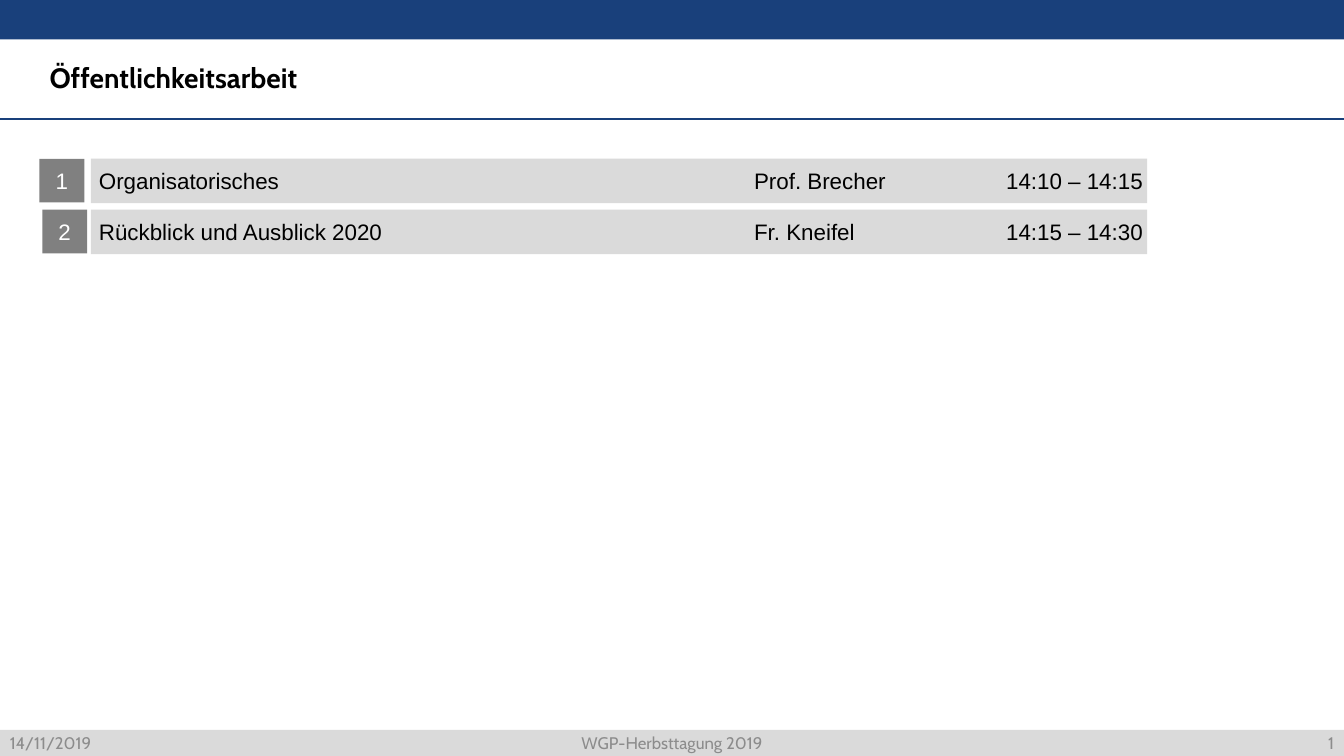
from lxml.etree import SubElement
from pptx import Presentation
from pptx.dml.color import RGBColor
from pptx.enum.shapes import MSO_CONNECTOR, MSO_SHAPE
from pptx.enum.text import MSO_ANCHOR, MSO_AUTO_SIZE, PP_ALIGN
from pptx.oxml.ns import qn
from pptx.util import Pt

WIDTH, HEIGHT = 960, 540
NAVY, LIGHT, GREY, MUTED = "19407B", "DADADA", "808080", "8C8C8C"
AGENDA = [
    ("Organisatorisches", "Prof. Brecher", "14:10 – 14:15"),
    ("Rückblick und Ausblick 2020", "Fr. Kneifel", "14:15 – 14:30"),
]


def color(value):
    return RGBColor.from_string(value)


def add_rectangle(slide, box, fill):
    shape = slide.shapes.add_shape(MSO_SHAPE.RECTANGLE, *map(Pt, box))
    shape.shadow.inherit = False
    shape.fill.solid()
    shape.fill.fore_color.rgb = color(fill)
    shape.line.fill.background()
    return shape


def write(shape, text, font_name, size, font_color, align=PP_ALIGN.LEFT, tabs=(), bold=False):
    frame = shape.text_frame
    frame.word_wrap = True
    frame.auto_size = MSO_AUTO_SIZE.NONE
    frame.vertical_anchor = MSO_ANCHOR.MIDDLE
    frame.text = text
    paragraph = frame.paragraphs[0]
    paragraph.alignment = align
    if tabs:
        tab_list = SubElement(paragraph._p.get_or_add_pPr(), qn("a:tabLst"))
        for position in tabs:
            SubElement(tab_list, qn("a:tab"), pos=str(Pt(position)), algn="l")
    font = paragraph.font
    font.name, font.size, font.bold = font_name, Pt(size), bold
    font.color.rgb = color(font_color)
    return frame


def set_insets(frame, left, right):
    frame.margin_left, frame.margin_right = Pt(left), Pt(right)
    frame.margin_top = frame.margin_bottom = Pt(0)


def add_header(slide, left, top, width, height):
    band_height = 28.2
    add_rectangle(slide, (left, top, width, band_height), NAVY)
    bottom = Pt(top + height)
    rule = slide.shapes.add_connector(
        MSO_CONNECTOR.STRAIGHT, Pt(left), bottom, Pt(left + width), bottom)
    rule.line.color.rgb = color(NAVY)
    rule.line.width = Pt(1.5)
    SubElement(rule._element.spPr, qn("a:effectLst"))
    title = slide.shapes.title
    title.left, title.top = Pt(left + 28.2), Pt(top + band_height + 0.6)
    title.width, title.height = Pt(735), Pt(height - band_height - 0.6)
    frame = write(title, "Öffentlichkeitsarbeit", "Cabin", 20, "000000", bold=True)
    frame.paragraphs[0].line_spacing = 0.9


def add_agenda(slide, left, top, width, row_height):
    pitch, badge_width, bar_offset = 36.4, 32, 36.8
    for index, entry in enumerate(AGENDA):
        row_top = top + index * pitch
        badge_box = (left + index * 2, row_top, badge_width, row_height - 0.5)
        badge = add_rectangle(slide, badge_box, GREY)
        frame = write(badge, str(index + 1), "Arial", 16, "FFFFFF", PP_ALIGN.CENTER)
        set_insets(frame, 5.7, 5.7)
        bar_box = (left + bar_offset, row_top, width - bar_offset, row_height)
        bar = add_rectangle(slide, bar_box, LIGHT)
        frame = write(bar, "\t".join(entry), "Arial", 16, "000000", tabs=(468, 648))
        set_insets(frame, 5.7, 0)


def add_footer(slide, left, top, width, height):
    add_rectangle(slide, (left, top, width, height), LIGHT)
    side = 216
    cells = [
        (left, side, "14/11/2019", PP_ALIGN.LEFT),
        (left + side, width - 2 * side, "WGP-Herbsttagung 2019", PP_ALIGN.CENTER),
        (left + width - side, side, "1", PP_ALIGN.RIGHT),
    ]
    for cell_left, cell_width, text, align in cells:
        box = slide.shapes.add_textbox(*map(Pt, (cell_left, top, cell_width, height)))
        set_insets(write(box, text, "Cabin", 12, MUTED, align), 7.2, 7.2)


def main():
    presentation = Presentation()
    presentation.slide_width, presentation.slide_height = Pt(WIDTH), Pt(HEIGHT)
    slide = presentation.slides.add_slide(presentation.slide_layouts[5])
    add_header(slide, 0, 0, WIDTH, 85)
    add_agenda(slide, 28.2, 113.4, 791.2, 31.7)
    add_footer(slide, 0, 521.3, WIDTH, 18.7)
    presentation.save("out.pptx")


if __name__ == "__main__":
    main()
